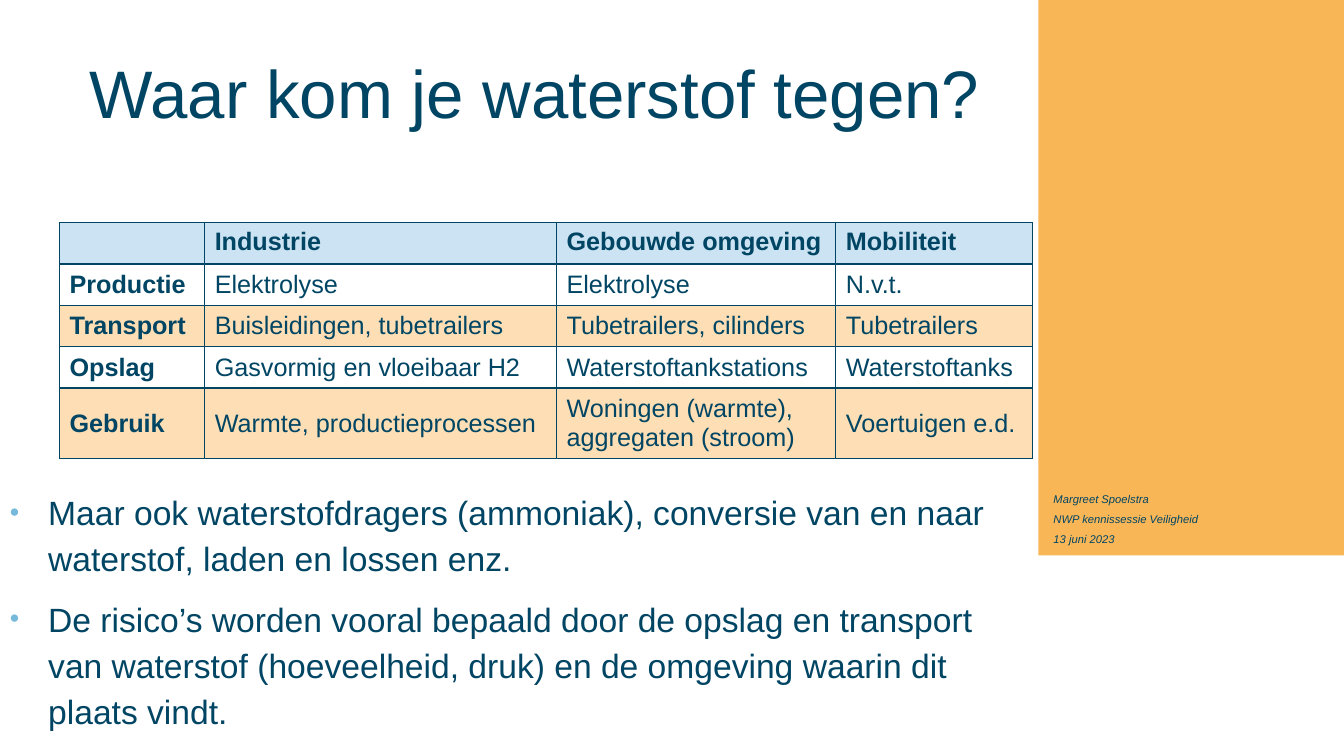
import pptx
import pptx.util
import pptx.dml.color
import pptx.enum.shapes
import pptx.enum.text
import pptx.oxml
import pptx.oxml.ns

PX = 9144
NAVY = pptx.dml.color.RGBColor(0x00, 0x45, 0x63)
ORANGE = pptx.dml.color.RGBColor(0xF9, 0xB6, 0x57)
PALE_ORANGE = pptx.dml.color.RGBColor(0xFE, 0xDE, 0xB4)
PALE_BLUE = pptx.dml.color.RGBColor(0xCB, 0xE3, 0xF2)
BULLET_BLUE = pptx.dml.color.RGBColor(0x76, 0xB9, 0xDA)
WHITE = pptx.dml.color.RGBColor(0xFF, 0xFF, 0xFF)
TOP = pptx.enum.text.MSO_ANCHOR.TOP
MIDDLE = pptx.enum.text.MSO_ANCHOR.MIDDLE
BOTTOM = pptx.enum.text.MSO_ANCHOR.BOTTOM
NAMESPACE = pptx.oxml.ns.nsdecls("a")


def add_run(paragraph, text, size, bold=False, italic=False):
    run = paragraph.add_run()
    run.text = text
    run.font.name = "Arial"
    run.font.size = pptx.util.Pt(size)
    run.font.bold = bold
    run.font.italic = italic
    run.font.color.rgb = NAVY


def add_text_frame(left, top, width, height, anchor=TOP):
    box = slide.shapes.add_textbox(left * PX, top * PX, width * PX, height * PX)
    box.text_frame.word_wrap = True
    box.text_frame.vertical_anchor = anchor
    return box.text_frame


presentation = pptx.Presentation()
presentation.slide_width = 1333 * PX
presentation.slide_height = 750 * PX
slide = presentation.slides.add_slide(presentation.slide_layouts[6])

side_panel = slide.shapes.add_shape(
    pptx.enum.shapes.MSO_SHAPE.RECTANGLE, 1030 * PX, 0, 303 * PX, 551 * PX)
side_panel.shadow.inherit = False
side_panel.fill.solid()
side_panel.fill.fore_color.rgb = ORANGE
side_panel.line.fill.background()

title = add_text_frame(79, 43, 906, 91, BOTTOM)
title.margin_bottom = 3 * PX
add_run(title.paragraphs[0], "Waar kom je waterstof tegen?", 48)

applications = [
    ["", "Industrie", "Gebouwde omgeving", "Mobiliteit"],
    ["Productie", "Elektrolyse", "Elektrolyse", "N.v.t."],
    ["Transport", "Buisleidingen, tubetrailers", "Tubetrailers, cilinders", "Tubetrailers"],
    ["Opslag", "Gasvormig en vloeibaar H2", "Waterstoftankstations", "Waterstoftanks"],
    ["Gebruik", "Warmte, productieprocessen", "Woningen (warmte), aggregaten (stroom)",
     "Voertuigen e.d."],
]
column_widths = [144, 349, 277, 195]
row_heights = [41, 41, 41, 41, 66]
row_fills = [PALE_BLUE, WHITE, PALE_ORANGE, WHITE, PALE_ORANGE]
table = slide.shapes.add_table(
    len(row_heights), len(column_widths), 59 * PX, 221 * PX,
    sum(column_widths) * PX, sum(row_heights) * PX).table
table.first_row = False
table.horz_banding = False
for column, width in zip(table.columns, column_widths):
    column.width = width * PX
for row_index, labels in enumerate(applications):
    table.rows[row_index].height = row_heights[row_index] * PX
    for column_index, label in enumerate(labels):
        cell = table.cell(row_index, column_index)
        cell.vertical_anchor = MIDDLE if row_index else TOP
        properties = cell._tc.get_or_add_tcPr()
        for side in ("lnL", "lnR", "lnT", "lnB"):
            properties.append(pptx.oxml.parse_xml(
                f'<a:{side} {NAMESPACE} w="12700"><a:solidFill>'
                f'<a:srgbClr val="{NAVY}"/></a:solidFill></a:{side}>'))
        cell.fill.solid()
        cell.fill.fore_color.rgb = row_fills[row_index]
        paragraph = cell.text_frame.paragraphs[0]
        if label:
            add_run(paragraph, label, 18, bold=row_index == 0 or column_index == 0)
        else:
            paragraph.font.size = pptx.util.Pt(18)

remarks = [
    "Maar ook waterstofdragers (ammoniak), conversie van en naar waterstof, "
    "laden en lossen enz.",
    "De risico’s worden vooral bepaald door de opslag en transport van waterstof "
    "(hoeveelheid, druk) en de omgeving waarin dit plaats vindt.",
]
body = add_text_frame(0, 477, 1030, 273)
for index, remark in enumerate(remarks):
    paragraph = body.add_paragraph() if index else body.paragraphs[0]
    properties = paragraph._p.get_or_add_pPr()
    properties.set("marL", str(38 * PX))
    properties.set("indent", str(-38 * PX))
    for bullet in (f'<a:buClr {NAMESPACE}><a:srgbClr val="{BULLET_BLUE}"/></a:buClr>',
                   f'<a:buSzPct {NAMESPACE} val="80000"/>',
                   f'<a:buFont {NAMESPACE} typeface="Arial"/>',
                   f'<a:buChar {NAMESPACE} char="•"/>'):
        properties.append(pptx.oxml.parse_xml(bullet))
    paragraph.line_spacing = 1.15
    paragraph.space_after = pptx.util.Pt(10)
    add_run(paragraph, remark, 24)

credits = add_text_frame(1035, 477, 190, 68)
for index, credit in enumerate(
        ["Margreet Spoelstra", "NWP kennissessie Veiligheid", "13 juni 2023"]):
    paragraph = credits.add_paragraph() if index else credits.paragraphs[0]
    paragraph.line_spacing = 1.5
    add_run(paragraph, credit, 8, italic=True)

presentation.save("out.pptx")
